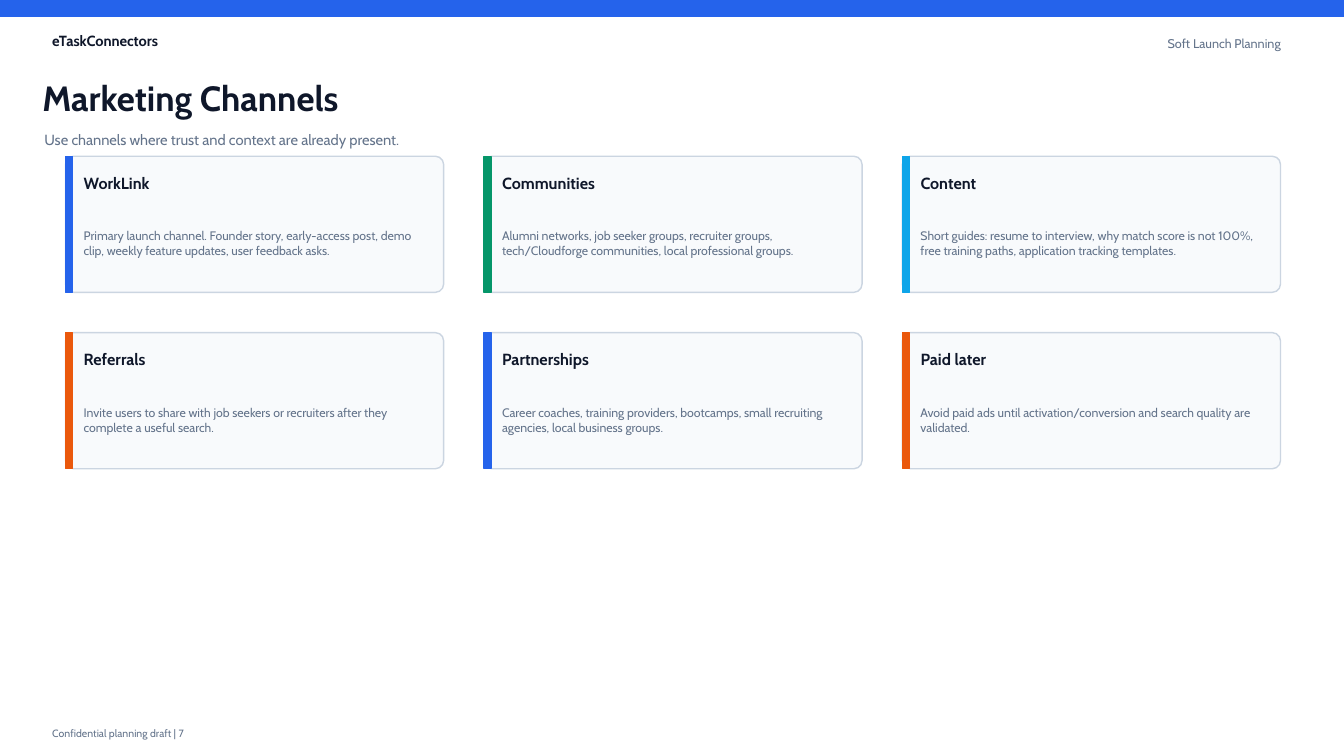
import pptx
import pptx.util
import pptx.dml.color
import pptx.enum.shapes
import pptx.enum.text

COLORS = {
    "blue": "2563EB", "green": "059669", "sky": "0EA5E9", "orange": "EA580C",
    "ink": "0F172A", "muted": "64748B", "card": "F8FAFC", "border": "CBD5E1",
    "white": "FFFFFF",
}
FONT = "Cabin"
TITLE = "Marketing Channels"
SUBTITLE = "Use channels where trust and context are already present."
BRAND = "eTaskConnectors"
SECTION = "Soft Launch Planning"
FOOTER = "Confidential planning draft | 7"
CHANNELS = [
    ("WorkLink", "blue", "Primary launch channel. Founder story, early-access post, demo clip, "
     "weekly feature updates, user feedback asks."),
    ("Communities", "green", "Alumni networks, job seeker groups, recruiter groups, "
     "tech/Cloudforge communities, local professional groups."),
    ("Content", "sky", "Short guides: resume to interview, why match score is not 100%, "
     "free training paths, application tracking templates."),
    ("Referrals", "orange", "Invite users to share with job seekers or recruiters after they "
     "complete a useful search."),
    ("Partnerships", "blue", "Career coaches, training providers, bootcamps, small recruiting "
     "agencies, local business groups."),
    ("Paid later", "orange", "Avoid paid ads until activation/conversion and search quality are "
     "validated."),
]

SLIDE_W, SLIDE_H = 13.33, 7.5
COLUMNS = 3
GRID_LEFT, GRID_TOP = 0.65, 1.55
CARD_W, CARD_H = 3.75, 1.35
GAP = 0.4
ACCENT_W = 0.07
TEXT_INDENT = 0.18

SHAPE = pptx.enum.shapes.MSO_SHAPE
ALIGN = pptx.enum.text.PP_ALIGN


def rgb(name):
    return pptx.dml.color.RGBColor.from_string(COLORS[name])


def place(sp, box):
    sp.left, sp.top, sp.width, sp.height = [pptx.util.Inches(v) for v in box]


def write(sp, text, size, color, bold=False, align=ALIGN.LEFT, inset=True):
    tf = sp.text_frame
    tf.text = text
    tf.word_wrap = True
    tf.auto_size = pptx.enum.text.MSO_AUTO_SIZE.NONE
    tf.vertical_anchor = pptx.enum.text.MSO_ANCHOR.MIDDLE
    if not inset:
        tf.margin_left = tf.margin_right = tf.margin_top = tf.margin_bottom = 0
    p = tf.paragraphs[0]
    p.alignment = align
    r = p.runs[0]
    r.font.name = FONT
    r.font.size = pptx.util.Pt(size)
    r.font.bold = bold
    r.font.color.rgb = rgb(color)


def add_text(slide, box, *args, **kwargs):
    sp = slide.shapes.add_textbox(*[pptx.util.Inches(v) for v in box])
    write(sp, *args, **kwargs)


def add_block(slide, kind, box, fill, line):
    sp = slide.shapes.add_shape(kind, *[pptx.util.Inches(v) for v in box])
    sp.shadow.inherit = False
    sp.fill.solid()
    sp.fill.fore_color.rgb = rgb(fill)
    sp.line.color.rgb = rgb(line)
    sp.line.width = pptx.util.Pt(1)
    return sp


def add_card(slide, index, name, accent, detail):
    row, col = divmod(index, COLUMNS)
    x = GRID_LEFT + col * (CARD_W + GAP)
    y = GRID_TOP + row * (CARD_H + GAP)
    card = add_block(slide, SHAPE.ROUNDED_RECTANGLE, (x, y, CARD_W, CARD_H), "card", "border")
    card.adjustments[0] = 0.06
    add_block(slide, SHAPE.RECTANGLE, (x, y, ACCENT_W, CARD_H), accent, accent)
    add_text(slide, (x + TEXT_INDENT, y + 0.14, 3.45, 0.25), name, 11.5, "ink",
             bold=True, inset=False)
    add_text(slide, (x + TEXT_INDENT, y + 0.48, 3.47, 0.77), detail, 8.8, "muted", inset=False)


def main():
    prs = pptx.Presentation()
    prs.slide_width = pptx.util.Inches(SLIDE_W)
    prs.slide_height = pptx.util.Inches(SLIDE_H)
    slide = prs.slides.add_slide(prs.slide_layouts[5])
    slide.background.fill.solid()
    slide.background.fill.fore_color.rgb = rgb("white")

    place(slide.shapes.title, (0.42, 0.72, 8.7, 0.5))
    write(slide.shapes.title, TITLE, 25, "ink", bold=True, inset=False)

    add_block(slide, SHAPE.RECTANGLE, (0, 0, SLIDE_W, 0.16), "blue", "blue")
    add_text(slide, (0.42, 0.28, 2.3, 0.25), BRAND, 10.5, "ink", bold=True)
    add_text(slide, (0.44, 1.22, 9.5, 0.34), SUBTITLE, 10.5, "muted", inset=False)
    add_text(slide, (10.35, 0.3, 2.45, 0.26), SECTION, 9, "muted", align=ALIGN.RIGHT)
    for index, channel in enumerate(CHANNELS):
        add_card(slide, index, *channel)
    add_text(slide, (0.42, 7.18, 4.6, 0.2), FOOTER, 7.5, "muted")

    prs.save("out.pptx")


if __name__ == "__main__":
    main()
